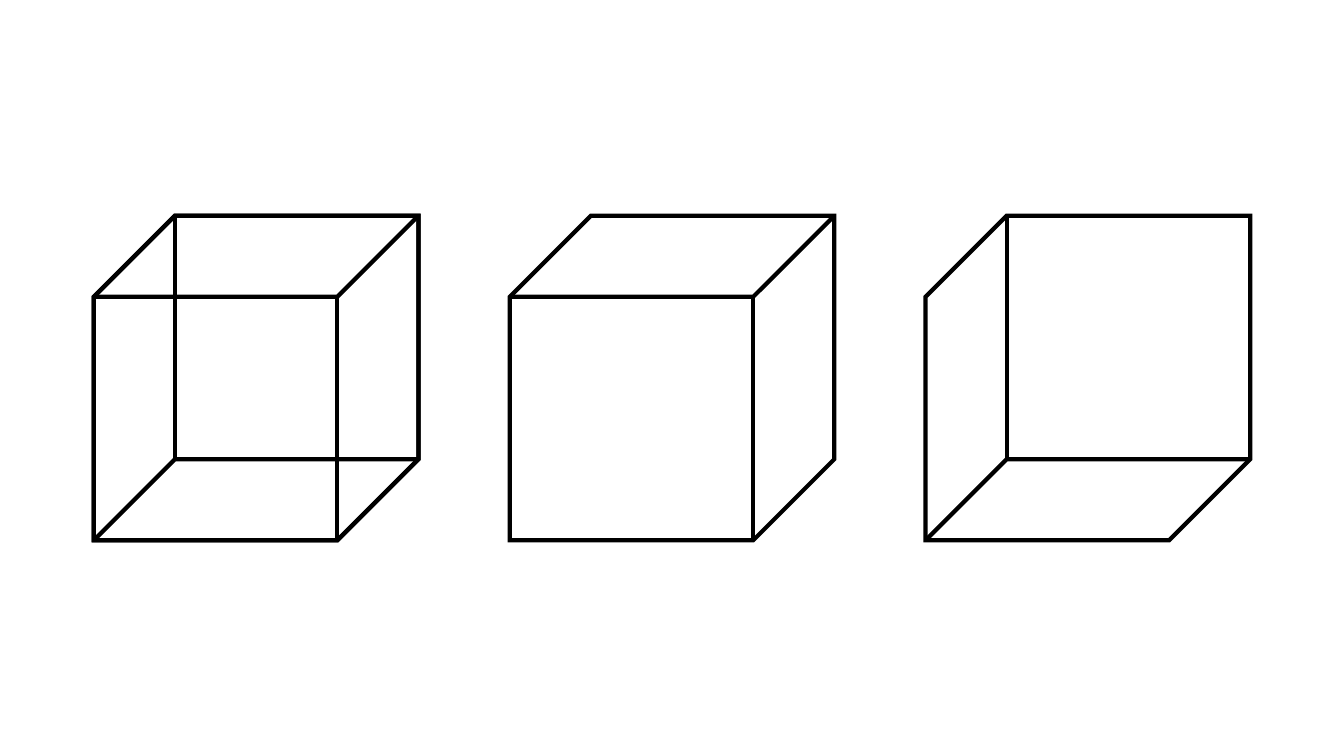
from lxml import etree
from pptx import Presentation
from pptx.dml.color import RGBColor
from pptx.enum.shapes import MSO_SHAPE
from pptx.oxml.ns import qn
from pptx.util import Inches, Pt

CUBE = MSO_SHAPE.CUBE
BLACK = RGBColor(0, 0, 0)
WIDE, HIGH = Inches(13.33), Inches(7.5)
SIDE = Inches(3.22)
LEFT = Inches(0.93)
STEP = (WIDE - 2 * LEFT - SIDE) / 2
TOP = (HIGH - SIDE) / 2
BELOW = 180
CUBES = [(0, 0), (0, BELOW), (1, 0), (2, BELOW)]


def add_cube(slide, col, turn):
    cube = slide.shapes.add_shape(CUBE, round(LEFT + col * STEP), round(TOP), SIDE, SIDE)
    cube.shadow.inherit = False
    cube.fill.background()
    cube.line.color.rgb = BLACK
    for target, key, value in ((cube, "rotation", turn), (cube.line, "width", Pt(3))):
        setattr(target, key, value)
    edge = cube.line.color and cube._element.spPr.find(qn("a:ln"))
    etree.SubElement(edge, qn("a:miter"), lim="800000")


def main():
    deck = Presentation()
    for key, value in {"slide_width": WIDE, "slide_height": HIGH}.items():
        setattr(deck, key, value)
    slide = deck.slides.add_slide(deck.slide_layouts[6])
    for col, turn in CUBES:
        add_cube(slide, col, turn)
    deck.save("out.pptx")


if __name__ == "__main__":
    main()
